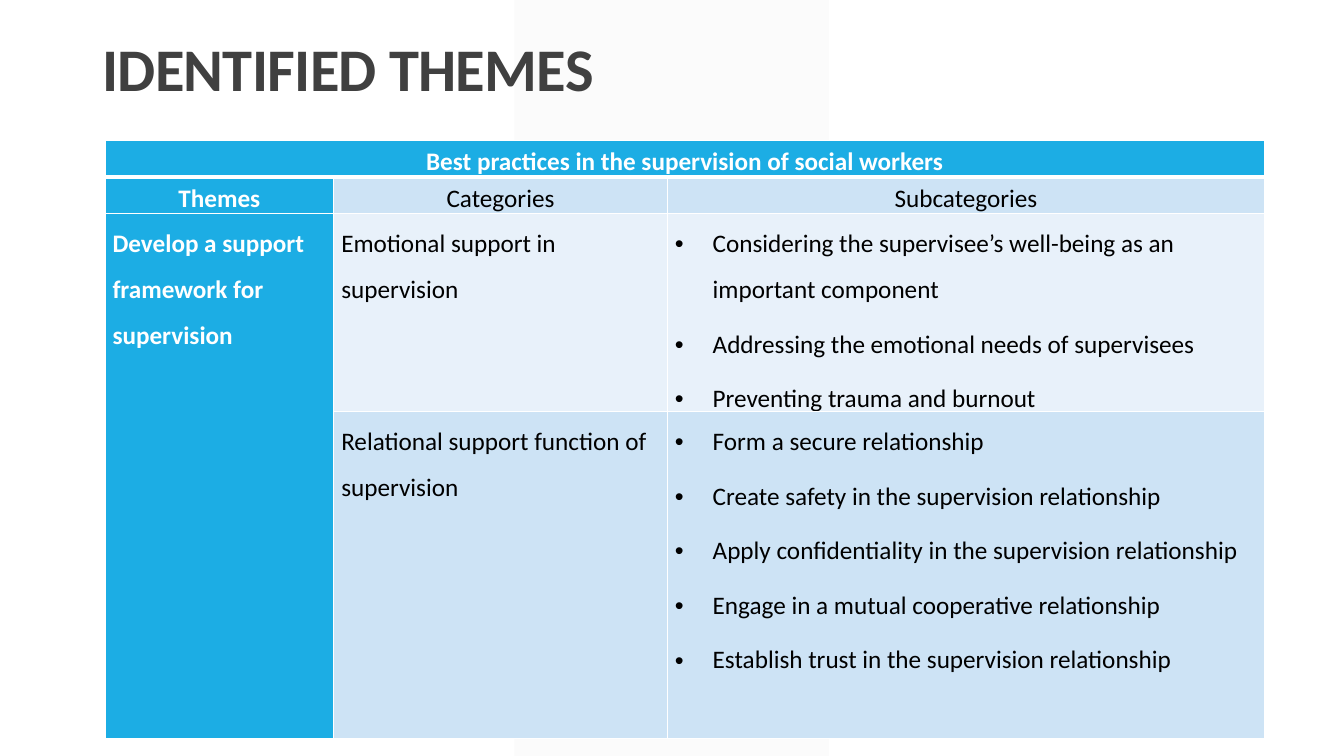
from lxml import etree
from pptx import Presentation
from pptx.dml.color import RGBColor
from pptx.enum.shapes import MSO_SHAPE
from pptx.enum.text import MSO_ANCHOR, PP_ALIGN
from pptx.oxml.ns import qn
from pptx.util import Pt

PARALLELOGRAM = MSO_SHAPE.PARALLELOGRAM
TOP = MSO_ANCHOR.TOP
LEFT, CENTER = PP_ALIGN.LEFT, PP_ALIGN.CENTER

FONT = "Calibri"
WHITE, BLACK, GREY = "FFFFFF", "000000", "404040"
BLUE, PALE, PALEST = "1CADE4", "CDE3F5", "E8F1FA"

TITLE = "IDENTIFIED THEMES"
HEADING = "Best practices in the supervision of social workers"
COLUMN_NAMES = ["Themes", "Categories", "Subcategories"]
THEME = "Develop a support framework for supervision"
CATEGORIES = [
    ("Emotional support in supervision", PALEST, [
        "Considering the supervisee’s well-being as an important component",
        "Addressing the emotional needs of supervisees",
        "Preventing trauma and burnout",
    ]),
    ("Relational support function of supervision", PALE, [
        "Form a secure relationship",
        "Create safety in the supervision relationship",
        "Apply confidentiality in the supervision relationship",
        "Engage in a mutual cooperative relationship",
        "Establish trust in the supervision relationship",
    ]),
]

COLUMN_WIDTHS = [163.4, 238.3, 426.7]
ROW_HEIGHTS = [23, 23, 132, 233.5]
TABLE_LEFT, TABLE_TOP = 75, 100.4
BULLET_INDENT = 27


def color(hex_string):
    return RGBColor.from_string(hex_string)


def style_font(font, size, hex_string, bold):
    font.name, font.size, font.bold = FONT, Pt(size), bold
    font.color.rgb = color(hex_string)


def add_bullet(paragraph):
    properties = paragraph._p.get_or_add_pPr()
    properties.set("marL", str(Pt(BULLET_INDENT)))
    properties.set("indent", str(-Pt(BULLET_INDENT)))
    etree.SubElement(properties, qn("a:buFont"), typeface="Arial")
    etree.SubElement(properties, qn("a:buChar"), char="•")


def add_borders(cell, row):
    """Draw white borders, with a thick rule under the heading row."""
    widths = {"L": 1, "R": 1, "T": 3 if row == 1 else 1, "B": 3 if row == 0 else 1}
    properties = cell._tc.get_or_add_tcPr()
    for side, width in widths.items():
        line = etree.SubElement(properties, qn("a:ln" + side), w=str(Pt(width)))
        fill = etree.SubElement(line, qn("a:solidFill"))
        etree.SubElement(fill, qn("a:srgbClr"), val=WHITE)


def fill_cell(cell, lines, fill, align=LEFT, spacing=1.5, bulleted=False):
    cell.fill.solid()
    cell.fill.fore_color.rgb = color(fill)
    cell.margin_left = cell.margin_right = Pt(5.4)
    cell.margin_top = cell.margin_bottom = 0
    cell.text_frame.text = "\n".join(lines)
    on_blue = fill == BLUE
    for paragraph in cell.text_frame.paragraphs:
        paragraph.alignment = align
        paragraph.line_spacing = spacing
        paragraph.space_before = paragraph.space_after = Pt(3)
        if bulleted:
            add_bullet(paragraph)
        style_font(paragraph.runs[0].font, 18, WHITE if on_blue else BLACK, on_blue)


def add_band(slide):
    band = slide.shapes.add_shape(PARALLELOGRAM, Pt(367.5), 0, Pt(224.5), Pt(540))
    band.adjustments[0] = 0
    band.shadow.inherit = False
    band.line.fill.background()
    band.fill.solid()
    band.fill.fore_color.rgb = color("F2F2F2")
    tint = band._element.spPr.find(qn("a:solidFill"))[0]
    etree.SubElement(tint, qn("a:alpha"), val="30000")


def add_title(slide):
    box = slide.shapes.add_textbox(Pt(66), Pt(28.8), Pt(828), Pt(92))
    frame = box.text_frame
    frame.word_wrap = True
    frame.vertical_anchor = TOP
    frame.text = TITLE
    paragraph = frame.paragraphs[0]
    paragraph.line_spacing = 0.8
    run = paragraph.runs[0]
    style_font(run.font, 43.2, GREY, True)
    run._r.get_or_add_rPr().set("spc", "-50")


def add_themes_table(slide):
    table = slide.shapes.add_table(
        len(ROW_HEIGHTS), len(COLUMN_WIDTHS), Pt(TABLE_LEFT), Pt(TABLE_TOP),
        Pt(sum(COLUMN_WIDTHS)), Pt(sum(ROW_HEIGHTS))).table
    for column, width in zip(table.columns, COLUMN_WIDTHS):
        column.width = Pt(width)
    for index, (row, height) in enumerate(zip(table.rows, ROW_HEIGHTS)):
        row.height = Pt(height)
        for cell in row.cells:
            add_borders(cell, index)

    table.cell(0, 0).merge(table.cell(0, 2))
    table.cell(2, 0).merge(table.cell(3, 0))
    fill_cell(table.cell(0, 0), [HEADING], BLUE, CENTER, 1.2)
    for column, name in enumerate(COLUMN_NAMES):
        fill = PALE if column else BLUE
        fill_cell(table.cell(1, column), [name], fill, CENTER, 1.2)
    fill_cell(table.cell(2, 0), [THEME], BLUE)
    for row, (category, fill, subcategories) in enumerate(CATEGORIES, start=2):
        fill_cell(table.cell(row, 1), [category], fill)
        fill_cell(table.cell(row, 2), subcategories, fill, bulleted=True)


def main():
    presentation = Presentation()
    presentation.slide_width, presentation.slide_height = Pt(960), Pt(540)
    slide = presentation.slides.add_slide(presentation.slide_layouts[6])
    add_band(slide)
    add_title(slide)
    add_themes_table(slide)
    presentation.save("out.pptx")


if __name__ == "__main__":
    main()
